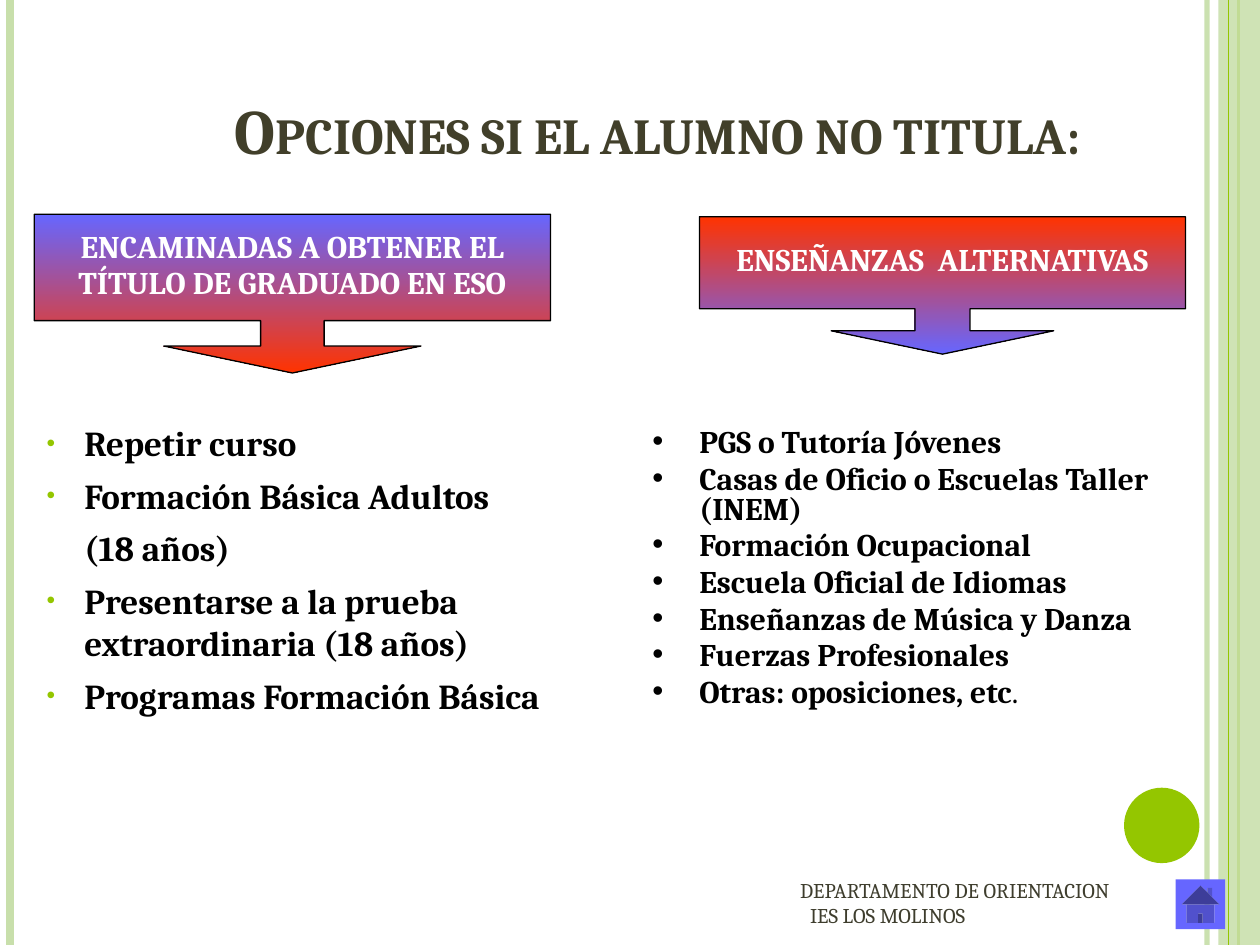
from lxml import etree
from pptx import Presentation
from pptx.dml.color import RGBColor
from pptx.enum.shapes import MSO_CONNECTOR, MSO_SHAPE as SHAPE
from pptx.enum.text import MSO_ANCHOR as ANCHOR, PP_ALIGN as ALIGN
from pptx.oxml.ns import qn
from pptx.util import Cm, Pt

FONT = "Cambria"
W, H = 25.4, 19.05
C = {"pale": "C8DFAB", "green": "94C600", "title": "413F2A", "footer": "3E3D2D",
     "blue": "6666FF", "red": "FF3300", "black": "000000", "white": "FFFFFF"}

# Content (boxes are left, top, width, height in cm)
TITLE = "Opciones si el alumno no titula:"
CALLOUTS = [
    ((0.69, 4.32, 10.41, 3.2), ("blue", "red"),
     ["ENCAMINADAS A OBTENER EL", "TÍTULO DE GRADUADO EN ESO"]),
    ((14.1, 4.37, 9.8, 2.77), ("red", "blue"), ["ENSEÑANZAS  ALTERNATIVAS"]),
]
CALLOUT_ADJ = (0.4, 0.81, 0.17, 0.67)
CONTINUATION = "(18 años)"
DEGREE_OPTIONS = ["Repetir curso", "Formación Básica Adultos", CONTINUATION,
                  "Presentarse a la prueba extraordinaria (18 años)",
                  "Programas Formación Básica"]
ALTERNATIVES = ["PGS o Tutoría Jóvenes", "Casas de Oficio o Escuelas Taller (INEM)",
                "Formación Ocupacional", "Escuela Oficial de Idiomas",
                "Enseñanzas de Música y Danza", "Fuerzas Profesionales",
                "Otras: oposiciones, etc"]
FOOTER = ["DEPARTAMENTO DE ORIENTACION", "IES LOS MOLINOS"]


def rgb(name):
    return RGBColor.from_string(C[name])


def box(values):
    return [Cm(v) for v in values]


def set_alpha(fill_parent, percent):
    color = next(fill_parent.iter(qn("a:srgbClr")))
    etree.SubElement(color, qn("a:alpha"), val=str(percent * 1000))


def add_rule(s, x, color, width, alpha=None):
    line = s.shapes.add_connector(MSO_CONNECTOR.STRAIGHT, Cm(x), 0, Cm(x), Cm(H))
    line.line.color.rgb = rgb(color)
    line.line.width = Pt(width)
    sp_pr = line._element.spPr
    if alpha:
        set_alpha(sp_pr, alpha)
    etree.SubElement(sp_pr, qn("a:effectLst"))


def add_shape(s, kind, place, color=None):
    sp = s.shapes.add_shape(kind, *box(place))
    sp.shadow.inherit = False
    if color:
        sp.fill.solid()
        sp.fill.fore_color.rgb = rgb(color)
        sp.line.fill.background()
    return sp


def style_run(r, size, color, bold=False):
    r.font.name, r.font.size, r.font.bold = FONT, Pt(size), bold
    r.font.color.rgb = rgb(color)


def fill_text(tf, lines, size, color, bold=False, before=0, spacing=None, align=ALIGN.LEFT):
    tf.text = "\n".join(lines)
    for p in tf.paragraphs:
        p.alignment = align
        p.space_before = Pt(before)
        if spacing:
            p.line_spacing = spacing
        style_run(p.runs[0], size, color, bold)


def set_indent(p, left, hanging=0):
    p_pr = p._p.get_or_add_pPr()
    p_pr.set("marL", str(Cm(left)))
    p_pr.set("indent", str(-Cm(hanging)))
    return p_pr


def add_list(s, place, items, size, before, indent, spacing=None, bullet_color=None):
    tf = s.shapes.add_textbox(*box(place)).text_frame
    tf.word_wrap = True
    fill_text(tf, items, size, "black", True, before, spacing)
    for p in tf.paragraphs:
        if p.text == CONTINUATION:
            set_indent(p, indent)
            continue
        p_pr = set_indent(p, indent, indent)
        if bullet_color:
            clr = etree.SubElement(p_pr, qn("a:buClr"))
            etree.SubElement(clr, qn("a:srgbClr"), val=C[bullet_color])
            etree.SubElement(p_pr, qn("a:buSzPct"), val="70000")
        etree.SubElement(p_pr, qn("a:buFont"), typeface="Arial")
        etree.SubElement(p_pr, qn("a:buChar"), char="•")
    return tf


def main():
    prs = Presentation()
    prs.slide_width, prs.slide_height = Cm(W), Cm(H)
    s = prs.slides.add_slide(prs.slide_layouts[5])

    # Side decoration
    add_rule(s, 24.33, "pale", 3, 93)
    add_rule(s, 0.2, "pale", 4.5)
    add_rule(s, 24.97, "green", 1.5)
    band = add_shape(s, SHAPE.RECTANGLE, (24.56, 0, 0.84, H), "pale")
    set_alpha(band._element.spPr, 87)
    add_rule(s, 24.77, "green", 0.75)
    add_shape(s, SHAPE.OVAL, (22.66, 15.88, 1.52, 1.52), "green")

    # Title
    title = s.shapes.title
    title.left, title.top, title.width, title.height = box((2.39, 0.71, 21.74, 2.79))
    tf = title.text_frame
    tf.vertical_anchor = ANCHOR.BOTTOM
    fill_text(tf, [TITLE], 36, "title", True, align=ALIGN.CENTER)
    tf.paragraphs[0].runs[0].font._element.set("cap", "small")

    # Gradient callouts
    for place, stops, lines in CALLOUTS:
        sp = add_shape(s, SHAPE.DOWN_ARROW_CALLOUT, place)
        for i, value in enumerate(CALLOUT_ADJ):
            sp.adjustments[i] = value
        sp.fill.gradient()
        sp.fill.gradient_angle = 270
        for i, (stop, color) in enumerate(zip(sp.fill.gradient_stops, stops)):
            stop.position = i
            stop.color.rgb = rgb(color)
        sp.line.color.rgb = rgb("black")
        sp.line.width = Pt(0.75)
        tf = sp.text_frame
        tf.word_wrap = False
        tf.vertical_anchor = ANCHOR.MIDDLE
        fill_text(tf, lines, 18, "white", True, 3.6, 0.8, ALIGN.CENTER)

    # Option lists
    add_list(s, (0.69, 8.38, 12.01, 10.16), DEGREE_OPTIONS, 20, 6, 0.76,
             bullet_color="green")
    tf = add_list(s, (12.9, 8.53, 10.59, 8.03), ALTERNATIVES, 18, 3.6, 0.95, 0.8)
    r = tf.paragraphs[-1].add_run()
    r.text = "."
    style_run(r, 18, "black")

    # Footer and home button
    tf = s.shapes.add_textbox(*box((15.88, 17.53, 8.05, 1.32))).text_frame
    tf.word_wrap = True
    tf.vertical_anchor = ANCHOR.MIDDLE
    fill_text(tf, FOOTER, 12, "footer")
    set_indent(tf.paragraphs[1], 0.2)
    add_shape(s, SHAPE.ACTION_BUTTON_HOME, (23.7, 17.73, 1, 1), "blue")

    prs.save("out.pptx")


if __name__ == "__main__":
    main()
